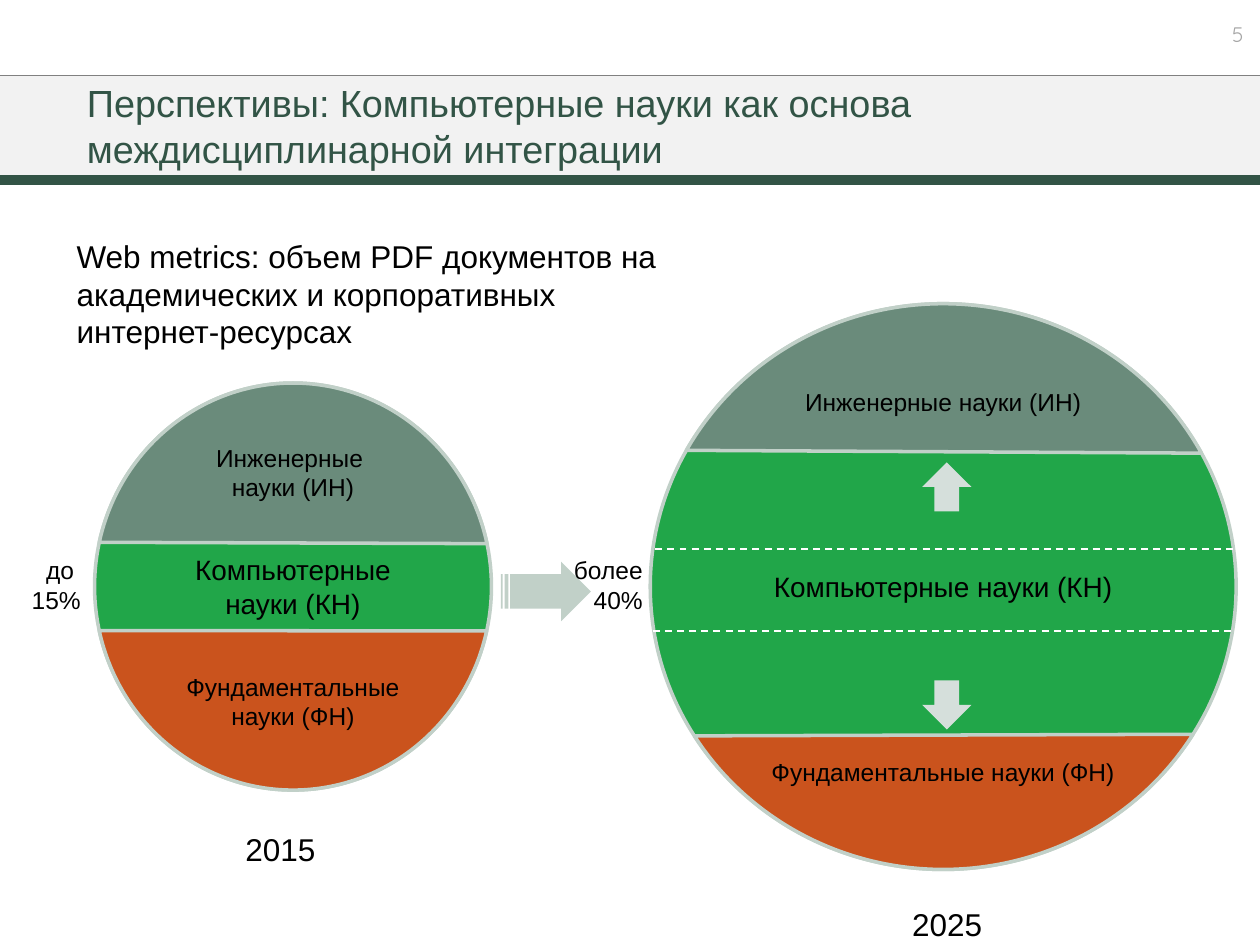
"""Build the slide on computer science as the basis of interdisciplinary integration."""
from lxml.etree import SubElement
from pptx import Presentation
from pptx.dml.color import RGBColor
from pptx.enum.dml import MSO_LINE
from pptx.enum.shapes import MSO_CONNECTOR, MSO_SHAPE
from pptx.enum.text import MSO_ANCHOR, MSO_AUTO_SIZE, PP_ALIGN
from pptx.oxml.ns import qn
from pptx.util import Pt

BLACK = RGBColor(0x00, 0x00, 0x00)
WHITE = RGBColor(0xFF, 0xFF, 0xFF)
GREY = RGBColor(0x80, 0x80, 0x80)
PAGE_GREY = RGBColor(0xA6, 0xA6, 0xA6)
BAND = RGBColor(0xF2, 0xF2, 0xF2)
DARK_GREEN = RGBColor(0x32, 0x54, 0x46)
GREEN = RGBColor(0x21, 0xA6, 0x49)
SAGE = RGBColor(0x6A, 0x8B, 0x7B)
ORANGE = RGBColor(0xCA, 0x53, 0x1D)
PALE = RGBColor(0xC1, 0xD0, 0xC8)
PALER = RGBColor(0xD5, 0xDF, 0xDB)


def write(shape, text, size=18, color=BLACK, font="Arial", align=PP_ALIGN.LEFT,
          anchor=MSO_ANCHOR.TOP, wrap=True, inset=None, upright=False):
    frame = shape.text_frame
    frame.text = text
    frame.word_wrap = wrap
    frame.auto_size = MSO_AUTO_SIZE.NONE
    frame.vertical_anchor = anchor
    if inset is not None:
        frame.margin_left = frame.margin_right = Pt(inset)
        frame.margin_top = frame.margin_bottom = Pt(inset)
    if upright:
        frame._txBody.bodyPr.set("vert", "vert270")
    for paragraph in frame.paragraphs:
        paragraph.alignment = align
        for line_break in paragraph._p.findall(qn("a:br")):
            SubElement(line_break, qn("a:rPr"), sz=str(size * 100))
        for run in paragraph.runs:
            run.font.size = Pt(size)
            run.font.name = font
            run.font.color.rgb = color


def draw(shapes, kind, box, fill, line=None, rotation=0, flip=False, adjust=()):
    shape = shapes.add_shape(kind, *[Pt(length) for length in box])
    shape.shadow.inherit = False
    shape.fill.solid()
    shape.fill.fore_color.rgb = fill
    if line is None:
        shape.line.fill.background()
    else:
        shape.line.color.rgb = line
        shape.line.width = Pt(2)
    shape.rotation = rotation
    if flip:
        shape._element.spPr.find(qn("a:xfrm")).set("flipV", "1")
    for index, value in enumerate(adjust):
        shape.adjustments[index] = value
    return shape


presentation = Presentation()
presentation.slide_width, presentation.slide_height = Pt(720), Pt(540)
slide = presentation.slides.add_slide(presentation.slide_layouts[5])
shapes = slide.shapes

title = shapes.title
title.left, title.top, title.width, title.height = Pt(0), Pt(43.2), Pt(720), Pt(56.9)
title.fill.solid()
title.fill.fore_color.rgb = BAND
write(title, "Перспективы: Компьютерные науки как основа междисциплинарной интеграции",
      size=21.6, color=DARK_GREEN, anchor=MSO_ANCHOR.MIDDLE)
title_indent = title.text_frame.paragraphs[0]._p.get_or_add_pPr()
title_indent.set("marL", str(Pt(42.5)))
title_indent.set("indent", "0")
draw(shapes, MSO_SHAPE.RECTANGLE, (0, 100.1, 720, 5.6), DARK_GREEN)

circles = [
    ((51.1, 221.8, 232.6, 226.8), "Инженерные \vнауки (ИН)", (61.72, 154.52), (61.68, 154.25)),
    ((377.3, 167.8, 323.3, 334.8), "Инженерные науки (ИН)", (70.77, 145.61), (72.58, 143.64)),
]
for box, engineering, top_angles, bottom_angles in circles:
    parts = shapes.add_group_shape().shapes
    computing = draw(parts, MSO_SHAPE.OVAL, box, GREEN, PALE, rotation=90)
    write(computing, "Компьютерные науки (КН)", size=16, align=PP_ALIGN.CENTER,
          anchor=MSO_ANCHOR.MIDDLE, upright=True)
    top = draw(parts, MSO_SHAPE.CHORD, box, SAGE, PALE, rotation=90, adjust=top_angles)
    write(top, engineering, size=14, align=PP_ALIGN.CENTER, inset=0, upright=True)
    bottom = draw(parts, MSO_SHAPE.CHORD, box, ORANGE, PALE, rotation=270, flip=True,
                  adjust=bottom_angles)
    write(bottom, "Фундаментальные науки (ФН)", size=14, align=PP_ALIGN.CENTER,
          anchor=MSO_ANCHOR.BOTTOM, inset=0, upright=True)

for arrow_top, flip in ((264.2, False), (388.8, True)):
    draw(shapes, MSO_SHAPE.UP_ARROW, (527, arrow_top, 28.1, 28.1), PALER, flip=flip)
draw(shapes, MSO_SHAPE.STRIPED_RIGHT_ARROW, (286.2, 321, 51.4, 34), PALE, adjust=(0.58, 0.5))

small = dict(size=14, align=PP_ALIGN.RIGHT, wrap=False)
labels = [
    ((666, 3.6, 51.8, 26.6), "5", dict(size=12, color=PAGE_GREY, font="Quicksand",
                                       align=PP_ALIGN.RIGHT, anchor=MSO_ANCHOR.BOTTOM)),
    ((36.7, 131.8, 362.9, 72.7),
     "Web metrics: объем PDF документов на академических и корпоративных интернет-ресурсах", {}),
    ((133.2, 470.9, 54.7, 28.8), "2015", dict(wrap=False)),
    ((514.1, 513.4, 54.7, 28.8), "2025", dict(wrap=False)),
    ((10.8, 313.9, 42.5, 41), "до \n15%", small),
    ((320.4, 313.9, 54, 41), "более\n40%", small),
]
for box, text, style in labels:
    write(shapes.add_textbox(*[Pt(length) for length in box]), text, **style)

rules = [
    (0, 720, 43.2, GREY, 0.75, MSO_LINE.SOLID),
    (374.4, 705.6, 313.9, WHITE, 1, MSO_LINE.DASH),
    (373, 704.2, 360.7, WHITE, 1, MSO_LINE.DASH),
]
for start, end, height, color, width, dash in rules:
    rule = shapes.add_connector(MSO_CONNECTOR.STRAIGHT, Pt(start), Pt(height), Pt(end), Pt(height))
    rule.line.color.rgb = color
    rule.line.width = Pt(width)
    rule.line.dash_style = dash
    SubElement(rule._element.spPr, qn("a:effectLst"))

presentation.save("out.pptx")
